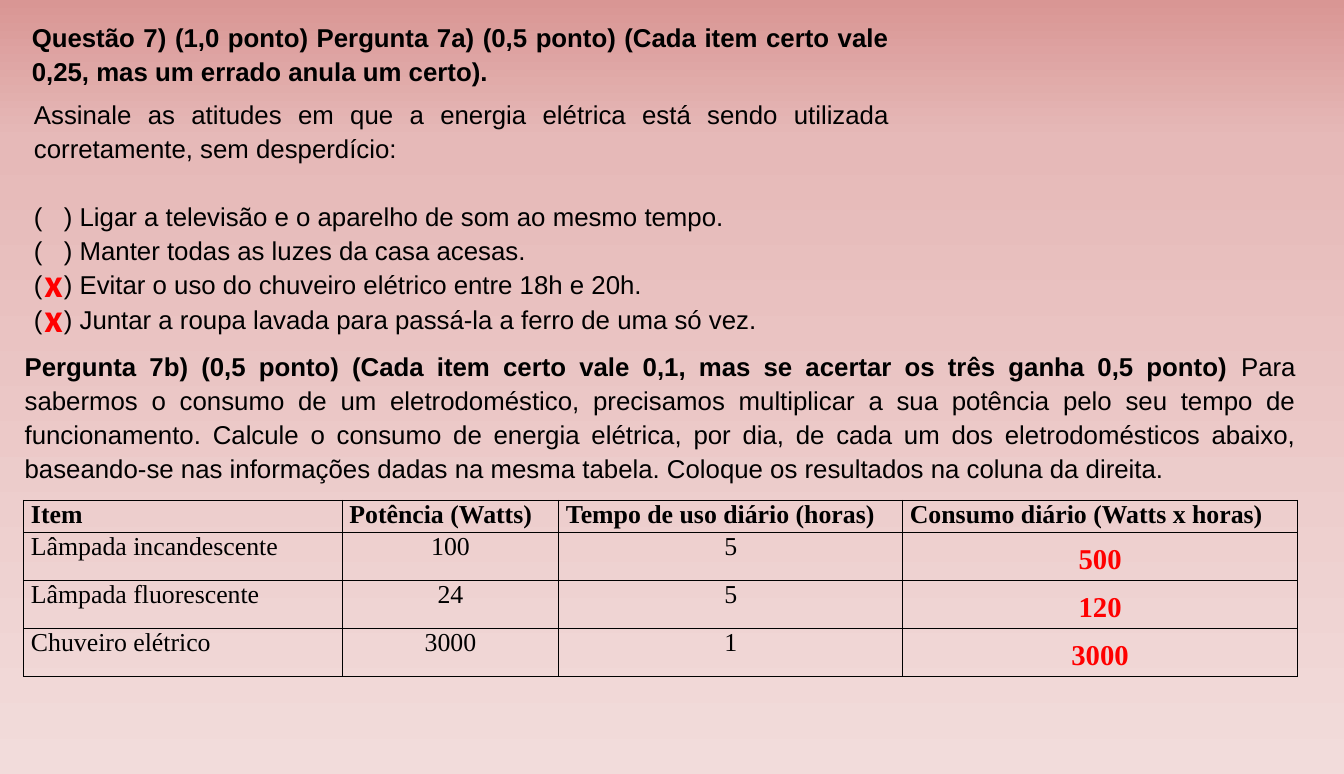
from copy import deepcopy
from dataclasses import dataclass

from lxml.etree import SubElement
from pptx import Presentation
from pptx.dml.color import RGBColor
from pptx.enum.text import MSO_AUTO_SIZE, PP_ALIGN
from pptx.oxml.ns import qn
from pptx.util import Inches, Pt


@dataclass(frozen=True)
class Theme:
    ink: str = "000000"
    answer: str = "FF0000"
    gradient: tuple = ((0, "D99694"), (0.18, "E6B9B8"), (1, "F2DCDB"))
    sans: str = "Arial"
    serif: str = "Times New Roman"
    mark: str = "Calibri"
    body_size: int = 18
    answer_size: int = 20
    mark_size: int = 28
    line_spacing: float = 1.1


THEME = Theme()
WIDTH, HEIGHT = Inches(13.02), Inches(7.5)
COLUMN, ROW = WIDTH / 100, HEIGHT / 100

OPTIONS = (
    ("Ligar a televisão e o aparelho de som ao mesmo tempo.", False),
    ("Manter todas as luzes da casa acesas.", False),
    ("Evitar o uso do chuveiro elétrico entre 18h e 20h.", True),
    ("Juntar a roupa lavada para passá-la a ferro de uma só vez.", True),
)
HEADINGS = ("Item", "Potência (Watts)", "Tempo de uso diário (horas)",
            "Consumo diário (Watts x horas)")
APPLIANCES = (
    ("Lâmpada incandescente", "100", "5", "500"),
    ("Lâmpada fluorescente", "24", "5", "120"),
    ("Chuveiro elétrico", "3000", "1", "3000"),
)
COLUMN_SHARES = (0.25, 0.17, 0.27, 0.31)
HEADER_SHARE, BODY_SHARE = 0.18, 0.27


def grid_box(left, top, width, height):
    """Turn hundredths of the slide into a box of lengths."""
    return (int(left * COLUMN), int(top * ROW),
            int(width * COLUMN), int(height * ROW))


def add_span(para, text, font, size, color=THEME.ink, bold=False):
    span = para.add_run()
    span.text = text
    span.font.name = font
    span.font.size = Pt(size)
    span.font.bold = bold
    span.font.color.rgb = RGBColor.from_string(color)


def add_text_box(page, box, wrap=True):
    frame = page.shapes.add_textbox(*box).text_frame
    frame.word_wrap = wrap
    frame.auto_size = MSO_AUTO_SIZE.SHAPE_TO_FIT_TEXT
    return frame


def style_body(para):
    para.alignment = PP_ALIGN.JUSTIFY
    para.line_spacing = THEME.line_spacing


def paint_background(page):
    fill = page.background.fill
    fill.gradient()
    fill.gradient_angle = 270
    stop_list = page.element.find(".//" + qn("a:gsLst"))
    stop_list.append(deepcopy(stop_list[-1]))
    for stop, (position, color) in zip(fill.gradient_stops, THEME.gradient):
        stop.position = position
        stop.color.rgb = RGBColor.from_string(color)


def add_statement(page, box, spans):
    """Add one justified paragraph from (text, bold) pairs."""
    para = add_text_box(page, box).paragraphs[0]
    style_body(para)
    for text, bold in spans:
        add_span(para, text, THEME.sans, THEME.body_size, bold=bold)


def add_tab_stop(para, position):
    tabs = SubElement(para._p.get_or_add_pPr(), qn("a:tabLst"))
    SubElement(tabs, qn("a:tab"), pos=str(position), algn="l")


def add_options(page, box, question):
    left, top, width, height = box
    frame = add_text_box(page, box)
    style_body(frame.paragraphs[0])
    add_span(frame.paragraphs[0], question, THEME.sans, THEME.body_size)
    line = Inches(0.33)
    for index, (text, correct) in enumerate(OPTIONS):
        para = frame.add_paragraph()
        style_body(para)
        if index == 0:
            para.space_before = line
        add_tab_stop(para, Inches(0.29))
        add_span(para, f"(\t) {text}", THEME.sans, THEME.body_size)
        if correct:
            mark_box = (left + Inches(0.1), top + Inches(0.91) + index * line,
                        Inches(0.38), Inches(0.57))
            mark = add_text_box(page, mark_box, wrap=False).paragraphs[0]
            add_span(mark, "x", THEME.mark, THEME.mark_size, THEME.answer, True)


def style_cell(cell):
    cell.margin_left = cell.margin_right = Inches(0.07)
    cell.margin_top = cell.margin_bottom = 0
    properties = cell._tc.get_or_add_tcPr()
    for side in ("a:lnL", "a:lnR", "a:lnT", "a:lnB"):
        border = SubElement(properties, qn(side), w=str(Pt(1)))
        paint = SubElement(border, qn("a:solidFill"))
        SubElement(paint, qn("a:srgbClr"), val=THEME.ink)
    cell.fill.background()


def add_consumption_table(page, box):
    left, top, width, height = box
    rows = (HEADINGS,) + tuple(entry[:3] + ("",) for entry in APPLIANCES)
    table = page.shapes.add_table(len(rows), len(HEADINGS), *box).table
    table.first_row = table.horz_banding = False
    for column, share in zip(table.columns, COLUMN_SHARES):
        column.width = int(width * share)
    for row_index, texts in enumerate(rows):
        heading = row_index == 0
        share = HEADER_SHARE if heading else BODY_SHARE
        table.rows[row_index].height = int(height * share)
        for column_index, text in enumerate(texts):
            cell = table.cell(row_index, column_index)
            style_cell(cell)
            para = cell.text_frame.paragraphs[0]
            para.font.size = Pt(THEME.body_size)
            if column_index and not heading:
                para.alignment = PP_ALIGN.CENTER
            if text:
                add_span(para, text, THEME.serif, THEME.body_size, bold=heading)
    add_answers(page, box)


def add_answers(page, box):
    """Centre each result in its row of the last table column."""
    left, top, width, height = box
    answer_width = Inches(0.76)
    center = left + width * (1 - COLUMN_SHARES[-1] / 2)
    for index, entry in enumerate(APPLIANCES):
        row_top = top + height * (HEADER_SHARE + index * BODY_SHARE)
        answer_box = (int(center - answer_width / 2),
                      int(row_top + Inches(0.03)), answer_width, Inches(0.44))
        para = add_text_box(page, answer_box, wrap=False).paragraphs[0]
        para.alignment = PP_ALIGN.CENTER
        add_span(para, entry[-1], THEME.serif, THEME.answer_size,
                 THEME.answer, True)


def build_question_page(deck):
    page = deck.slides.add_slide(deck.slide_layouts[6])
    paint_background(page)
    add_statement(page, grid_box(1.61, 1.73, 65.28, 10.27), (
        ("Questão 7) (1,0 ponto) Pergunta 7a) (0,5 ponto) (Cada item certo "
         "vale 0,25, mas um errado anula um certo).", True),
    ))
    add_options(page, grid_box(1.77, 11.73, 65.13, 32.4),
                "Assinale as atitudes em que a energia elétrica está sendo "
                "utilizada corretamente, sem desperdício:")
    add_statement(page, grid_box(1.08, 44.27, 96.08, 19.07), (
        ("Pergunta 7b) (0,5 ponto) (Cada item certo vale 0,1, mas se acertar "
         "os três ganha 0,5 ponto)", True),
        (" Para sabermos o consumo de um eletrodoméstico, precisamos "
         "multiplicar a sua potência pelo seu tempo de funcionamento. Calcule "
         "o consumo de energia elétrica, por dia, de cada um dos "
         "eletrodomésticos abaixo, baseando-se nas informações dadas na mesma "
         "tabela. Coloque os resultados na coluna da direita.", False),
    ))
    add_consumption_table(page, grid_box(1.77, 64.67, 94.78, 23))


def main():
    deck = Presentation()
    deck.slide_width, deck.slide_height = WIDTH, HEIGHT
    build_question_page(deck)
    deck.save("out.pptx")


if __name__ == "__main__":
    main()
